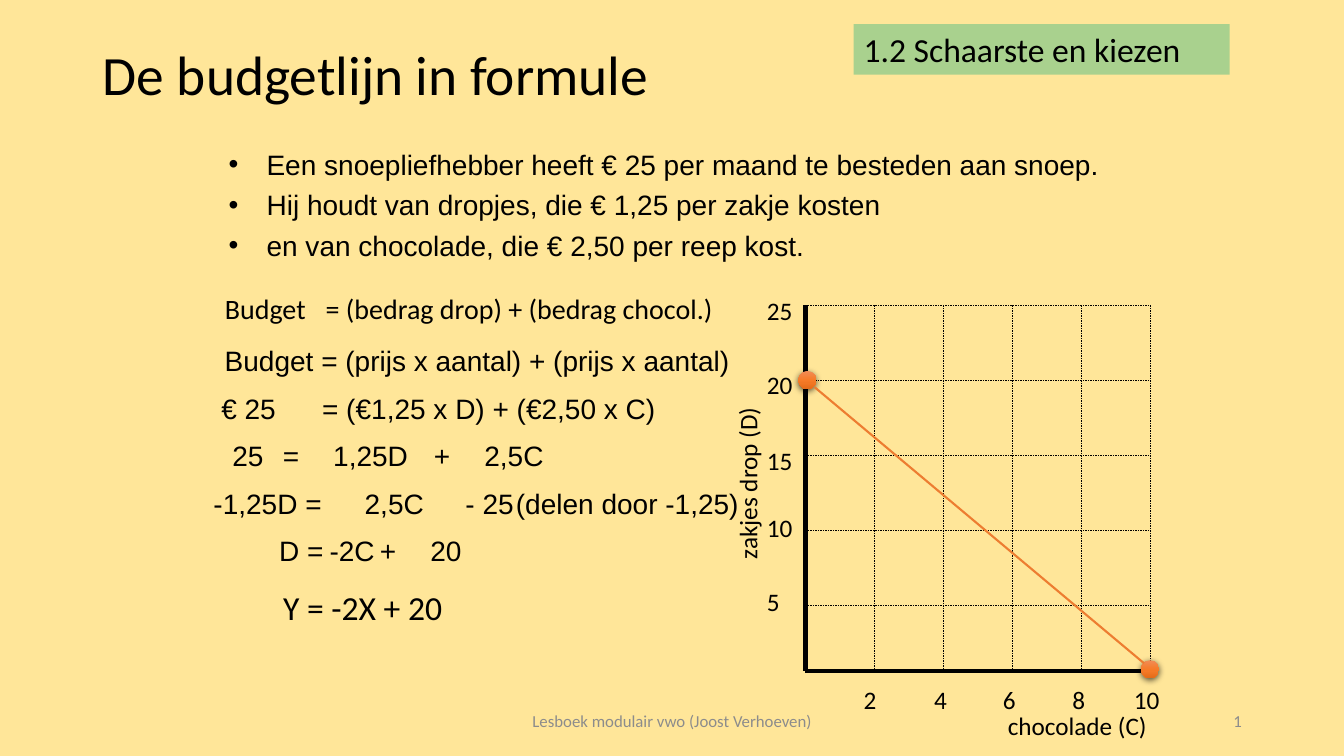
from lxml import etree
from pptx import Presentation
from pptx.dml.color import RGBColor
from pptx.enum.dml import MSO_LINE
from pptx.enum.shapes import MSO_CONNECTOR, MSO_SHAPE
from pptx.enum.text import MSO_ANCHOR, MSO_AUTO_SIZE, PP_ALIGN
from pptx.oxml import parse_xml
from pptx.oxml.ns import nsdecls, qn
from pptx.util import Pt

LEFT, CENTER, RIGHT = PP_ALIGN.LEFT, PP_ALIGN.CENTER, PP_ALIGN.RIGHT
TOP, MIDDLE = MSO_ANCHOR.TOP, MSO_ANCHOR.MIDDLE
STRAIGHT, DASH = MSO_CONNECTOR.STRAIGHT, MSO_LINE.DASH
RECTANGLE, OVAL = MSO_SHAPE.RECTANGLE, MSO_SHAPE.OVAL

COLORS = {
    "background": "FFE699", "ink": "000000", "tag": "A9D18E", "muted": "8C8C8C",
    "budget": "ED7D31", "dot_top": "F18C57", "dot_middle": "F67B28", "dot_bottom": "E56C19",
}


def color(name):
    return RGBColor.from_string(COLORS[name])


def write(frame, text, size=20, font="Arial", ink="ink", align=LEFT, anchor=TOP,
          wrap=True, before=0, spacing=None, bullet=None, tabs=()):
    """Fill a text frame, one paragraph for each line of text."""
    frame.auto_size = MSO_AUTO_SIZE.NONE
    frame.word_wrap = wrap
    frame.vertical_anchor = anchor
    for number, line in enumerate(text.split("\n")):
        para = frame.add_paragraph() if number else frame.paragraphs[0]
        para.alignment = align
        para.space_before = Pt(before)
        if spacing:
            para.line_spacing = spacing
        span = para.add_run()
        span.text = line
        span.font.size = Pt(size)
        span.font.name = font
        span.font.color.rgb = color(ink)
        props = para._p.get_or_add_pPr()
        indent = Pt(27) if bullet else 0
        props.set("marL", str(indent))
        props.set("indent", str(-indent))
        if bullet:
            etree.SubElement(props, qn("a:buFont"), typeface="Arial")
            etree.SubElement(props, qn("a:buChar"), char=bullet)
        else:
            etree.SubElement(props, qn("a:buNone"))
        if tabs:
            stops = etree.SubElement(props, qn("a:tabLst"))
            for stop in tabs:
                etree.SubElement(stops, qn("a:tab"), pos=str(Pt(stop)), algn="l")


class Painter:
    """Draws elements on one page; all lengths are points."""

    def __init__(self, page):
        self.page = page
        self.shapes = page.shapes
        page.background.fill.solid()
        page.background.fill.fore_color.rgb = color("background")

    def placeholder(self, index, text, left, top, width, height, **style):
        box = self.page.placeholders[index]
        box.left, box.top, box.width, box.height = map(Pt, (left, top, width, height))
        write(box.text_frame, text, **style)

    def text(self, text, left, top, width, height, rotation=0, **style):
        box = self.shapes.add_textbox(*map(Pt, (left, top, width, height)))
        box.rotation = rotation
        write(box.text_frame, text, **style)
        return box

    def page_number(self, text, *place, **style):
        para = self.text(text, *place, **style).text_frame.paragraphs[0]
        span = para.runs[0]._r
        field = etree.SubElement(para._p, qn("a:fld"), type="slidenum",
                                 id="{B6F15528-21DE-4FAA-801E-634DDDAF4B2B}")
        field.extend(list(span))
        para._p.remove(span)

    def tag(self, text, left, top, width, height, fill, **style):
        box = self.shapes.add_shape(RECTANGLE, *map(Pt, (left, top, width, height)))
        box.shadow.inherit = False
        box.fill.solid()
        box.fill.fore_color.rgb = color(fill)
        box.line.fill.background()
        write(box.text_frame, text, **style)

    def line(self, x1, y1, x2, y2, ink="ink", width=0.25, dash=None):
        line = self.shapes.add_connector(STRAIGHT, *map(Pt, (x1, y1, x2, y2)))
        line.line.color.rgb = color(ink)
        line.line.width = Pt(width)
        if dash:
            line.line.dash_style = dash
        etree.SubElement(line._element.spPr, qn("a:effectLst"))

    def dot(self, left, top, size):
        dot = self.shapes.add_shape(OVAL, *map(Pt, (left, top, size, size)))
        dot.line.fill.background()
        stops = "".join(
            f'<a:gs pos="{position}"><a:srgbClr val="{COLORS[name]}"/></a:gs>'
            for position, name in ((0, "dot_top"), (50000, "dot_middle"), (100000, "dot_bottom")))
        props = dot._element.spPr
        props.find(qn("a:ln")).addprevious(parse_xml(
            f'<a:gradFill {nsdecls("a")}><a:gsLst>{stops}</a:gsLst>'
            '<a:lin ang="5400000" scaled="0"/></a:gradFill>'))
        props.append(parse_xml(
            f'<a:effectLst {nsdecls("a")}><a:outerShdw blurRad="{Pt(4.5)}" dist="{Pt(1.5)}" '
            f'dir="5400000" algn="ctr" rotWithShape="0"><a:srgbClr val="{COLORS["ink"]}">'
            '<a:alpha val="63000"/></a:srgbClr></a:outerShdw></a:effectLst>'))


def main():
    deck = Presentation()
    deck.slide_width, deck.slide_height = Pt(960), Pt(540)
    painter = Painter(deck.slides.add_slide(deck.slide_layouts[3]))

    # Title, bullet list and first formula
    painter.placeholder(0, "De budgetlijn in formule", 66.2, 28.8, 499, 52.6,
                        size=39.6, font="Calibri", anchor=MIDDLE, spacing=0.9)
    painter.placeholder(1, "Een snoepliefhebber heeft € 25 per maand te besteden aan snoep.\n"
                        "Hij houdt van dropjes, die € 1,25 per zakje kosten\n"
                        "en van chocolade, die € 2,50 per reep kost.",
                        156.2, 101.5, 648, 95, before=5, bullet="•")
    painter.placeholder(2, "Budget\t= (bedrag drop) + (bedrag chocol.)", 153.4, 207.4, 666.7, 33.8,
                        font="Calibri", before=10, spacing=0.9, tabs=[67])

    # Derivation, one step a line
    steps = [
        ("Budget = (prijs x aantal) + (prijs x aantal)", 153.4, []),
        ("€ 25\t= (€1,25 x D) + (€2,50 x C)", 151, [66.7]),
        ("25\t=\t1,25D\t+\t2,5C", 158.9, [50, 78.4, 148.4, 176.8]),
        ("-1,25D =\t2,5C\t- 25\t(delen door -1,25)", 145.4, [93.9, 147.3, 209.6]),
        ("D =\t-2C\t+\t20", 192.3, [48.4, 91.7, 114.5]),
    ]
    for number, (formula, left, tabs) in enumerate(steps):
        painter.text(formula, left, 241.9 + 34 * number, 400, 33.8, before=4, tabs=tabs)
    painter.text("Y = -2X + 20", 195.1, 415.4, 159, 36, size=24, font="Calibri")

    # Axes and grid
    x0, y0, x_end, y_end = 575.3, 218.2, 821.3, 479.5
    painter.line(x0, y0, x0, y_end, width=3)
    painter.line(x_end, y_end, x0, y_end, width=3)
    for step in range(5):
        y = y0 + 53.5 * step
        x = x0 + 49.2 * (step + 1)
        painter.line(x0, y, x_end, y, dash=DASH)
        painter.line(x, y0, x, y_end, dash=DASH)

    # Axis labels
    label = {"size": 18, "font": "Calibri", "wrap": False}
    painter.text("chocolade (C)", 712.8, 504, 115.2, 28.8, **label)
    painter.text("zakjes drop (D)", 471.6, 329.8, 124.6, 28.8, rotation=270, **label)
    for value, top in zip((25, 20, 15, 10, 5), (207.4, 260.6, 314.6, 362.2, 415.4)):
        painter.text(str(value), 540.7, top, 33.1 if value > 9 else 23.8, 28.8, **label)
    for value, left in zip((2, 4, 6, 8, 10), (609.8, 660.2, 709.2, 758.9, 802.8)):
        painter.text(str(value), left, 485.3, 33.1 if value > 9 else 23.8, 28.8, **label)

    # Budget line with its end points
    painter.dot(570.2, 265, 13)
    painter.dot(815, 471.6, 13)
    painter.line(581.8, 276.5, 817.2, 473.8, ink="budget", width=1.5)

    # Section tag and footer
    painter.tag("1.2 Schaarste en kiezen", 609.8, 17.3, 268.6, 36, "tag", size=24, font="Calibri")
    footer = {"size": 12, "font": "Calibri", "ink": "muted", "anchor": MIDDLE}
    painter.text("Lesboek modulair vwo (Joost Verhoeven)", 318.2, 500.4, 324, 28.8,
                 align=CENTER, **footer)
    painter.page_number("8", 678.2, 500.4, 216, 28.8, align=RIGHT, **footer)

    deck.save("out.pptx")


if __name__ == "__main__":
    main()
